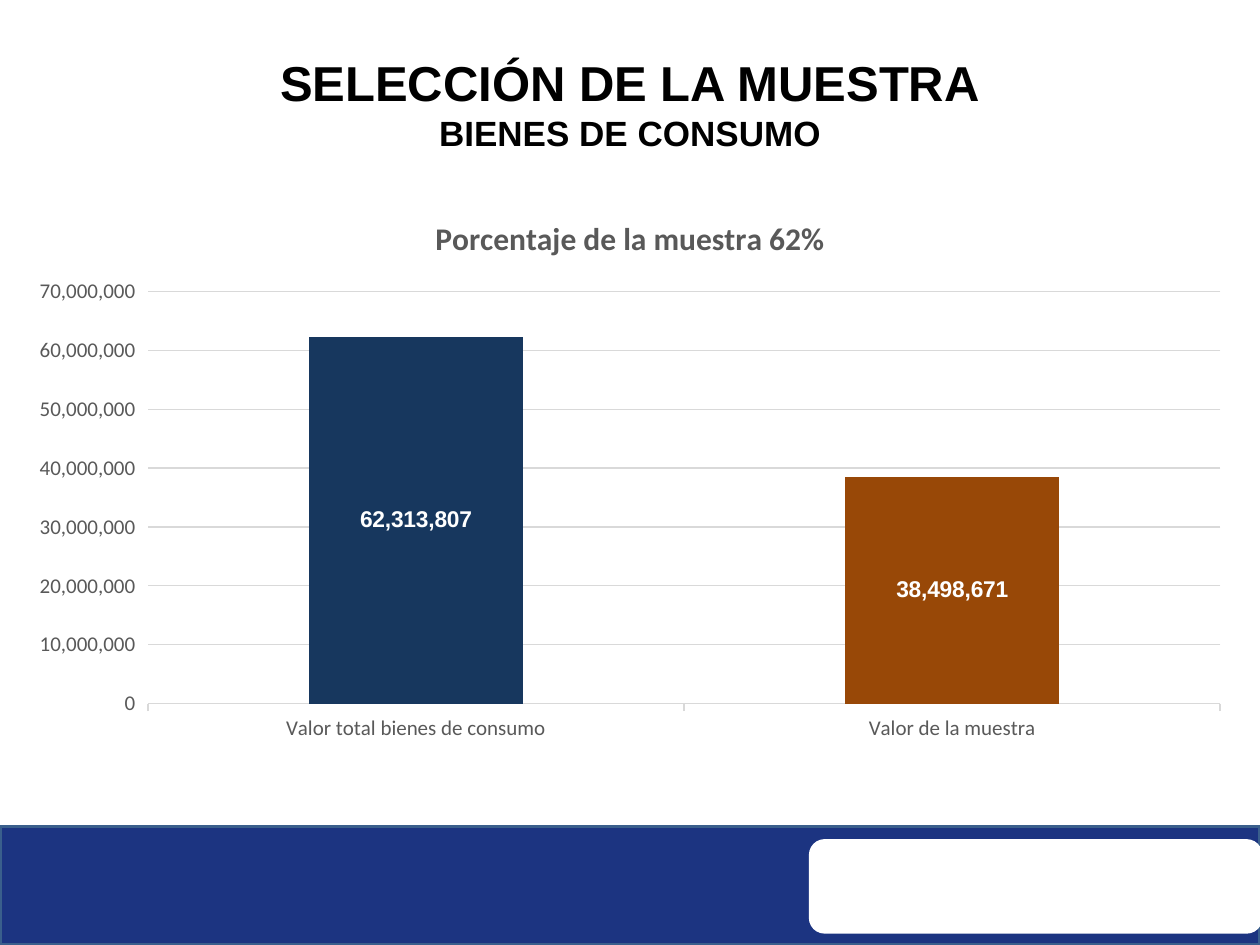
from dataclasses import dataclass
from typing import Optional

from pptx import Presentation
from pptx.chart.data import CategoryChartData
from pptx.dml.color import RGBColor
from pptx.enum.chart import XL_CHART_TYPE, XL_LABEL_POSITION, XL_TICK_MARK
from pptx.enum.shapes import MSO_SHAPE
from pptx.enum.text import MSO_ANCHOR, PP_ALIGN
from pptx.util import Inches, Pt

RECT = MSO_SHAPE.RECTANGLE
ROUND = MSO_SHAPE.ROUNDED_RECTANGLE
STACKED = XL_CHART_TYPE.COLUMN_STACKED
CENTER = XL_LABEL_POSITION.CENTER
OUTSIDE = XL_TICK_MARK.OUTSIDE
MIDDLE = MSO_ANCHOR.MIDDLE
MID = PP_ALIGN.CENTER

BLACK = RGBColor(0x00, 0x00, 0x00)
WHITE = RGBColor(0xFF, 0xFF, 0xFF)
BLUE = RGBColor(0x1C, 0x34, 0x81)
EDGE = RGBColor(0x3A, 0x5F, 0x8C)
NAVY = RGBColor(0x17, 0x37, 0x5E)
BROWN = RGBColor(0x98, 0x48, 0x07)
GRAY = RGBColor(0x59, 0x59, 0x59)
PALE = RGBColor(0xD9, 0xD9, 0xD9)


@dataclass
class Panel:
    kind: int
    left: float
    top: float
    width: float
    height: float
    fill: RGBColor
    edge: Optional[RGBColor] = None


@dataclass
class Bar:
    name: str
    value: int
    color: RGBColor


PANELS = [
    Panel(RECT, 0, 6.56, 10, 0.94, BLUE, EDGE),
    Panel(ROUND, 6.42, 6.66, 3.6, 0.75, WHITE),
]
BARS = [
    Bar("Valor total bienes de consumo", 62313807, NAVY),
    Bar("Valor de la muestra", 38498671, BROWN),
]
HEADS = [("SELECCIÓN DE LA MUESTRA", 28), ("BIENES DE CONSUMO", 20)]


def style(font, size: float, color: RGBColor, name: str = "Calibri",
          bold: bool = False) -> None:
    form = {"size": Pt(size), "name": name, "bold": bold}
    for key, value in form.items():
        setattr(font, key, value)
    font.color.rgb = color


def draw_line(line, color: RGBColor, width: float) -> None:
    line.color.rgb = color
    line.width = Pt(width)


def draw_panel(slide, panel: Panel) -> None:
    shape = slide.shapes.add_shape(
        panel.kind, Inches(panel.left), Inches(panel.top),
        Inches(panel.width), Inches(panel.height))
    shape.shadow.inherit = False
    shape.fill.solid()
    shape.fill.fore_color.rgb = panel.fill
    if panel.edge is None:
        shape.line.fill.background()
    else:
        draw_line(shape.line, panel.edge, 2)


def draw_title(slide) -> None:
    title = slide.shapes.title
    place = {"left": 0, "top": 0.36, "width": 10, "height": 0.91}
    for key, value in place.items():
        setattr(title, key, Inches(value))
    title.fill.solid()
    title.fill.fore_color.rgb = WHITE
    frame = title.text_frame
    frame.vertical_anchor = MIDDLE
    frame.text = "\n".join(text for text, _ in HEADS)
    for para, (_, size) in zip(frame.paragraphs, HEADS):
        para.alignment = MID
        style(para.runs[0].font, size, BLACK, "Arial", True)


def draw_chart(slide) -> None:
    data = CategoryChartData(number_format="#,##0")
    data.categories = [bar.name for bar in BARS]
    data.add_series("Series 1", [bar.value for bar in BARS])
    chart = slide.shapes.add_chart(
        STACKED, Inches(0.12), Inches(1.53), Inches(9.76), Inches(4.44),
        data).chart
    style(chart.font, 10, BLACK)
    chart.has_legend = False
    chart.has_title = True
    frame = chart.chart_title.text_frame
    frame.text = "Porcentaje de la muestra 62%"
    style(frame.paragraphs[0].runs[0].font, 18, GRAY, bold=True)

    cats, vals = chart.category_axis, chart.value_axis
    for axis in (cats, vals):
        style(axis.tick_labels.font, 12, GRAY)
        axis.major_tick_mark = OUTSIDE
    draw_line(cats.format.line, PALE, 1)
    vals.format.line.fill.background()
    vals.has_major_gridlines = True
    draw_line(vals.major_gridlines.format.line, PALE, 0.75)
    scale = {"minimum_scale": 0, "maximum_scale": 70000000,
             "major_unit": 10000000}
    for key, value in scale.items():
        setattr(vals, key, value)
    vals.tick_labels.number_format = "#,##0"
    vals.tick_labels.number_format_is_linked = False

    plot = chart.plots[0]
    form = {"gap_width": 150, "overlap": 100, "vary_by_categories": False}
    for key, value in form.items():
        setattr(plot, key, value)
    series = plot.series[0]
    series.format.fill.solid()
    series.format.fill.fore_color.rgb = NAVY
    for index, bar in enumerate(BARS):
        fill = series.points[index].format.fill
        fill.solid()
        fill.fore_color.rgb = bar.color
    labels = series.data_labels
    form = {"show_value": True, "position": CENTER,
            "number_format": "#,##0", "number_format_is_linked": False}
    for key, value in form.items():
        setattr(labels, key, value)
    style(labels.font, 13, WHITE, "Arial", True)


def main() -> None:
    deck = Presentation()
    deck.slide_width = Inches(10)
    deck.slide_height = Inches(7.5)
    slide = deck.slides.add_slide(deck.slide_layouts[5])
    for panel in PANELS:
        draw_panel(slide, panel)
    draw_title(slide)
    draw_chart(slide)
    deck.save("out.pptx")


if __name__ == "__main__":
    main()
